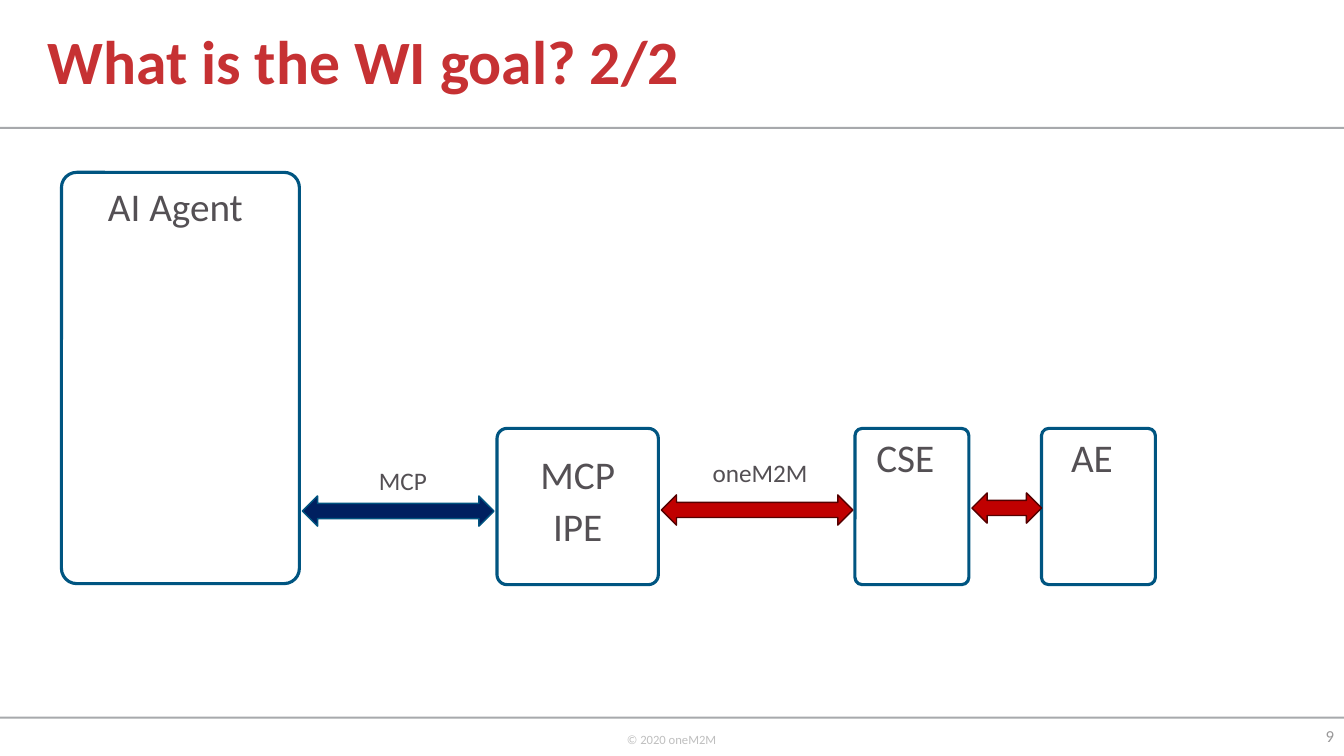
"""Build the slide that shows how an AI agent reaches oneM2M through an MCP IPE."""
from dataclasses import dataclass

from pptx import Presentation
from pptx.dml.color import RGBColor
from pptx.enum.shapes import MSO_SHAPE
from pptx.enum.text import MSO_ANCHOR, PP_ALIGN
from pptx.util import Inches, Pt

RECT, ROUND, ARROW = MSO_SHAPE.RECTANGLE, MSO_SHAPE.ROUNDED_RECTANGLE, MSO_SHAPE.LEFT_RIGHT_ARROW
LEFT, MID, RIGHT = PP_ALIGN.LEFT, PP_ALIGN.CENTER, PP_ALIGN.RIGHT
TOP, CENTER = MSO_ANCHOR.TOP, MSO_ANCHOR.MIDDLE

Area = tuple[float, float, float, float]


@dataclass(frozen=True)
class Theme:
    font: str = "Calibri"
    title: str = "C63133"
    text: str = "545054"
    rule: str = "A7A9AC"
    foot: str = "BFBFBF"
    page: str = "999899"
    edge: str = "005581"
    navy: str = "002060"
    teal: str = "005480"
    red: str = "C00000"
    dark: str = "540000"
    head: int = 44
    node: int = 28
    link: int = 18
    num: int = 12
    small: int = 9


@dataclass(frozen=True)
class Node:
    area: Area
    label: Area
    lines: tuple[str, ...]
    pitch: float = 0.9


@dataclass(frozen=True)
class Link:
    left: float
    top: float
    width: float
    fill: str
    line: str


@dataclass(frozen=True)
class Note:
    area: Area
    text: str
    size: int
    color: str
    align: PP_ALIGN = LEFT
    anchor: MSO_ANCHOR = TOP
    wrap: bool = False


THEME = Theme()
RULES = (1.26, 7.11)
ROW, TALL, SMALL = 4.25, 1.55, 1.13
NODES = (
    Node((0.61, 1.71, 2.36, 4.08), (0.61, 1.81, 2.26, 1), ("AI Agent",)),
    Node((4.93, ROW, 1.6, TALL), (4.58, 4.51, 2.3, 1.04), ("MCP", "IPE"), 0.8),
    Node((8.48, ROW, SMALL, TALL), (7.85, 4.3, 2.26, 0.73), ("CSE",)),
    Node((10.33, ROW, SMALL, TALL), (9.7, 4.3, 2.26, 0.73), ("AE",)),
)
LINKS = (
    Link(3, 4.92, 1.9, THEME.navy, THEME.teal),
    Link(6.56, 4.91, 1.9, THEME.red, THEME.dark),
    Link(9.64, 4.89, 0.69, THEME.red, THEME.dark),
)
NOTES = (
    Note((3.66, 4.57, 0.68, 0.4), "MCP", THEME.link, THEME.text),
    Note((6.97, 4.49, 1.15, 0.4), "oneM2M", THEME.link, THEME.text),
    Note((6.12, 7.21, 1.12, 0.4), "© 2020 oneM2M", THEME.small, THEME.foot),
    Note((12.79, 7.1, 0.54, 0.4), "9", THEME.num, THEME.page, RIGHT, CENTER, True),
)


def write(para, text: str, size: int, color: str, bold: bool = False) -> None:
    """Add one styled run to a paragraph."""
    run = para.add_run()
    run.text = text
    run.font.name = THEME.font
    run.font.size = Pt(size)
    run.font.bold = bold
    run.font.color.rgb = RGBColor.from_string(color)


def shape(slide, kind: MSO_SHAPE, area: Area, fill: str = "", line: str = "", width: float = 1):
    """Draw a flat preset shape, with fill and line only where named."""
    item = slide.shapes.add_shape(kind, *map(Inches, area))
    item.shadow.inherit = False
    if fill:
        item.fill.solid()
        item.fill.fore_color.rgb = RGBColor.from_string(fill)
    else:
        item.fill.background()
    if line:
        item.line.color.rgb = RGBColor.from_string(line)
        item.line.width = Pt(width)
    else:
        item.line.fill.background()
    return item


def draw_title(slide, text: str) -> None:
    """Place and format the title placeholder."""
    title = slide.shapes.title
    title.left, title.top, title.width, title.height = map(Inches, (0.37, 0, 8.59, 1.28))
    title.text_frame.vertical_anchor = CENTER
    para = title.text_frame.paragraphs[0]
    para.alignment = LEFT
    para.line_spacing = 0.9
    write(para, text, THEME.head, THEME.title, True)


def draw_node(slide, node: Node) -> None:
    """Draw an outlined box and its centred label."""
    box = shape(slide, ROUND, node.area, line=THEME.edge, width=2.25)
    box.adjustments[0] = 0.064
    frame = slide.shapes.add_textbox(*map(Inches, node.label)).text_frame
    frame.word_wrap = True
    for rank, line in enumerate(node.lines):
        para = frame.add_paragraph() if rank else frame.paragraphs[0]
        para.alignment = MID
        para.line_spacing = node.pitch
        para.space_before = Pt(10 if rank else 0)
        write(para, line, THEME.node, THEME.text)


def draw_link(slide, link: Link) -> None:
    """Draw a double-headed block arrow."""
    shape(slide, ARROW, (link.left, link.top, link.width, 0.3), link.fill, link.line)


def draw_note(slide, note: Note) -> None:
    """Draw a single line of text."""
    frame = slide.shapes.add_textbox(*map(Inches, note.area)).text_frame
    frame.word_wrap = note.wrap
    frame.vertical_anchor = note.anchor
    frame.paragraphs[0].alignment = note.align
    write(frame.paragraphs[0], note.text, note.size, note.color)


def main() -> None:
    """Build and save the deck."""
    deck = Presentation()
    deck.slide_width, deck.slide_height = Inches(13.33), Inches(7.5)
    slide = deck.slides.add_slide(deck.slide_layouts.get_by_name("Title Only"))
    for top in RULES:
        shape(slide, RECT, (0, top, 13.33, 0.02), THEME.rule)
    draw_title(slide, "What is the WI goal? 2/2")
    for node in NODES:
        draw_node(slide, node)
    for link in LINKS:
        draw_link(slide, link)
    for note in NOTES:
        draw_note(slide, note)
    deck.save("out.pptx")


if __name__ == "__main__":
    main()
